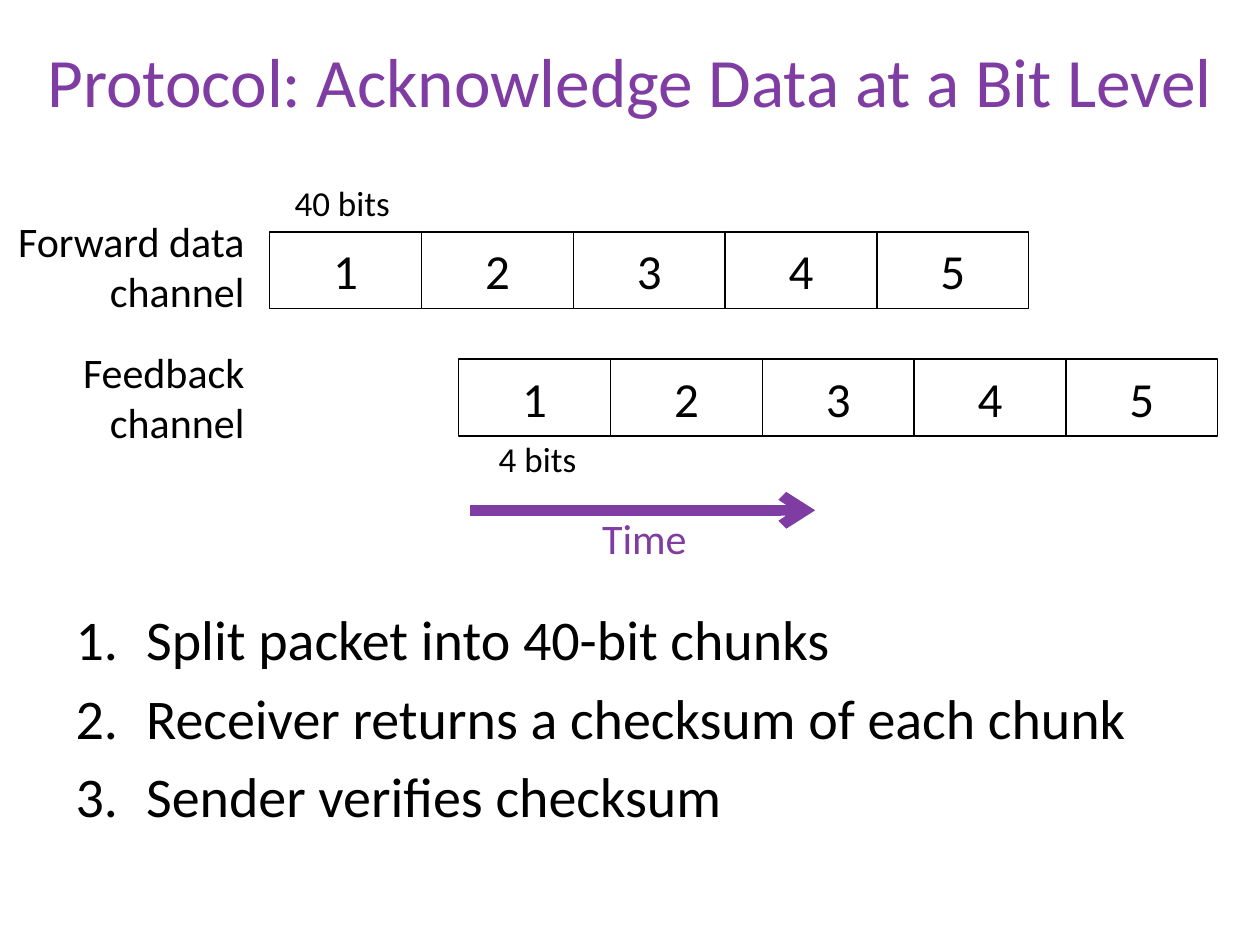
import pptx
import pptx.dml.color
import pptx.enum.shapes
import pptx.enum.text
import pptx.oxml
import pptx.oxml.ns
import pptx.util
from dataclasses import dataclass

Inches = pptx.util.Inches
Pt = pptx.util.Pt
RGB = pptx.dml.color.RGBColor
ALIGN = pptx.enum.text.PP_ALIGN
ANCHOR = pptx.enum.text.MSO_ANCHOR
AUTO_SIZE = pptx.enum.text.MSO_AUTO_SIZE


@dataclass(frozen=True)
class Theme:
    font: str = "Calibri"
    accent: RGB = RGB(0x7F, 0x3C, 0xA2)
    ink: RGB = RGB(0, 0, 0)
    paper: RGB = RGB(255, 255, 255)
    title: float = 39.6
    body: float = 32
    chunk: float = 28
    label: float = 24
    note: float = 20


@dataclass(frozen=True)
class Channel:
    left: float
    top: float


@dataclass(frozen=True)
class Label:
    lines: tuple[str, ...]
    left: float
    top: float
    width: float
    height: float
    size: float
    color: RGB
    align: ALIGN = ALIGN.LEFT


THEME = Theme()
CHUNK_COUNT = 5
CHUNK_WIDTH = 1.205
CHUNK_HEIGHT = 0.61

CHANNELS = (Channel(2.14, 1.84), Channel(3.64, 2.85))
LABELS = (
    Label(("Forward data", "channel"), 0, 1.66, 2.04, 0.91,
          THEME.label, THEME.ink, ALIGN.RIGHT),
    Label(("Feedback", "channel"), 0.53, 2.7, 1.51, 0.91,
          THEME.label, THEME.ink, ALIGN.RIGHT),
    Label(("40 bits",), 2.24, 1.39, 0.97, 0.44, THEME.note, THEME.ink),
    Label(("4 bits",), 3.86, 3.42, 0.82, 0.44, THEME.note, THEME.ink),
    Label(("Time",), 4.68, 4.02, 0.88, 0.5, THEME.label, THEME.accent),
)
STEPS = (
    "Split packet into 40-bit chunks",
    "Receiver returns a checksum of each chunk",
    "Sender verifies checksum",
)


def place(shape, left: float, top: float, width: float, height: float) -> None:
    shape.left, shape.top = Inches(left), Inches(top)
    shape.width, shape.height = Inches(width), Inches(height)


def write(frame, lines: tuple[str, ...], size: float, color: RGB,
          align: ALIGN) -> None:
    for index, line in enumerate(lines):
        paragraph = frame.add_paragraph() if index else frame.paragraphs[0]
        paragraph.alignment = align
        run = paragraph.add_run()
        run.text = line
        run.font.name = THEME.font
        run.font.size = Pt(size)
        run.font.color.rgb = color


def number(paragraph, indent: float) -> None:
    properties = paragraph._p.get_or_add_pPr()
    properties.set("marL", str(Inches(indent)))
    properties.set("indent", str(-Inches(indent)))
    numbering = pptx.oxml.parse_xml(
        f'<a:buAutoNum {pptx.oxml.ns.nsdecls("a")} type="arabicPeriod"/>')
    properties.append(numbering)


def draw_channel(slide, channel: Channel) -> None:
    for index in range(CHUNK_COUNT):
        chunk = slide.shapes.add_shape(
            pptx.enum.shapes.MSO_SHAPE.RECTANGLE,
            Inches(channel.left + index * CHUNK_WIDTH), Inches(channel.top),
            Inches(CHUNK_WIDTH), Inches(CHUNK_HEIGHT))
        chunk.shadow.inherit = False
        chunk.fill.solid()
        chunk.fill.fore_color.rgb = THEME.paper
        chunk.line.color.rgb = THEME.ink
        chunk.line.width = Pt(0.75)
        chunk.text_frame.vertical_anchor = ANCHOR.MIDDLE
        write(chunk.text_frame, (str(index + 1),), THEME.chunk, THEME.ink,
              ALIGN.CENTER)


def draw_label(slide, label: Label) -> None:
    box = slide.shapes.add_textbox(
        Inches(label.left), Inches(label.top),
        Inches(label.width), Inches(label.height))
    box.text_frame.word_wrap = False
    box.text_frame.auto_size = AUTO_SIZE.SHAPE_TO_FIT_TEXT
    write(box.text_frame, label.lines, label.size, label.color, label.align)


def draw_time_arrow(slide, start: float, end: float, y: float) -> None:
    arrow = slide.shapes.add_connector(
        pptx.enum.shapes.MSO_CONNECTOR.STRAIGHT,
        Inches(start), Inches(y), Inches(end), Inches(y))
    arrow.line.color.rgb = THEME.accent
    arrow.line.width = Pt(6)
    namespace = pptx.oxml.ns.nsdecls("a")
    arrow.line._get_or_add_ln().append(
        pptx.oxml.parse_xml(f'<a:tailEnd {namespace} type="arrow"/>'))
    arrow._element.spPr.append(
        pptx.oxml.parse_xml(f"<a:effectLst {namespace}/>"))


def main() -> None:
    deck = pptx.Presentation()
    deck.slide_width, deck.slide_height = Inches(10), Inches(7.5)
    slide = deck.slides.add_slide(deck.slide_layouts[1])

    # Title
    title = slide.shapes.title
    place(title, 0, 0.01, 10, 1.25)
    title.text_frame.auto_size = AUTO_SIZE.NONE
    title.text_frame.vertical_anchor = ANCHOR.MIDDLE
    write(title.text_frame, ("Protocol: Acknowledge Data at a Bit Level",),
          THEME.title, THEME.accent, ALIGN.CENTER)

    # Numbered protocol steps
    steps = slide.placeholders[1]
    place(steps, 0.5, 4.75, 9, 2.37)
    steps.text_frame.auto_size = AUTO_SIZE.NONE
    write(steps.text_frame, STEPS, THEME.body, THEME.ink, ALIGN.LEFT)
    for paragraph in steps.text_frame.paragraphs:
        number(paragraph, 0.56)

    # Timing diagram
    for channel in CHANNELS:
        draw_channel(slide, channel)
    draw_time_arrow(slide, 3.73, 6.47, 4.05)
    for label in LABELS:
        draw_label(slide, label)

    deck.save("out.pptx")


if __name__ == "__main__":
    main()
